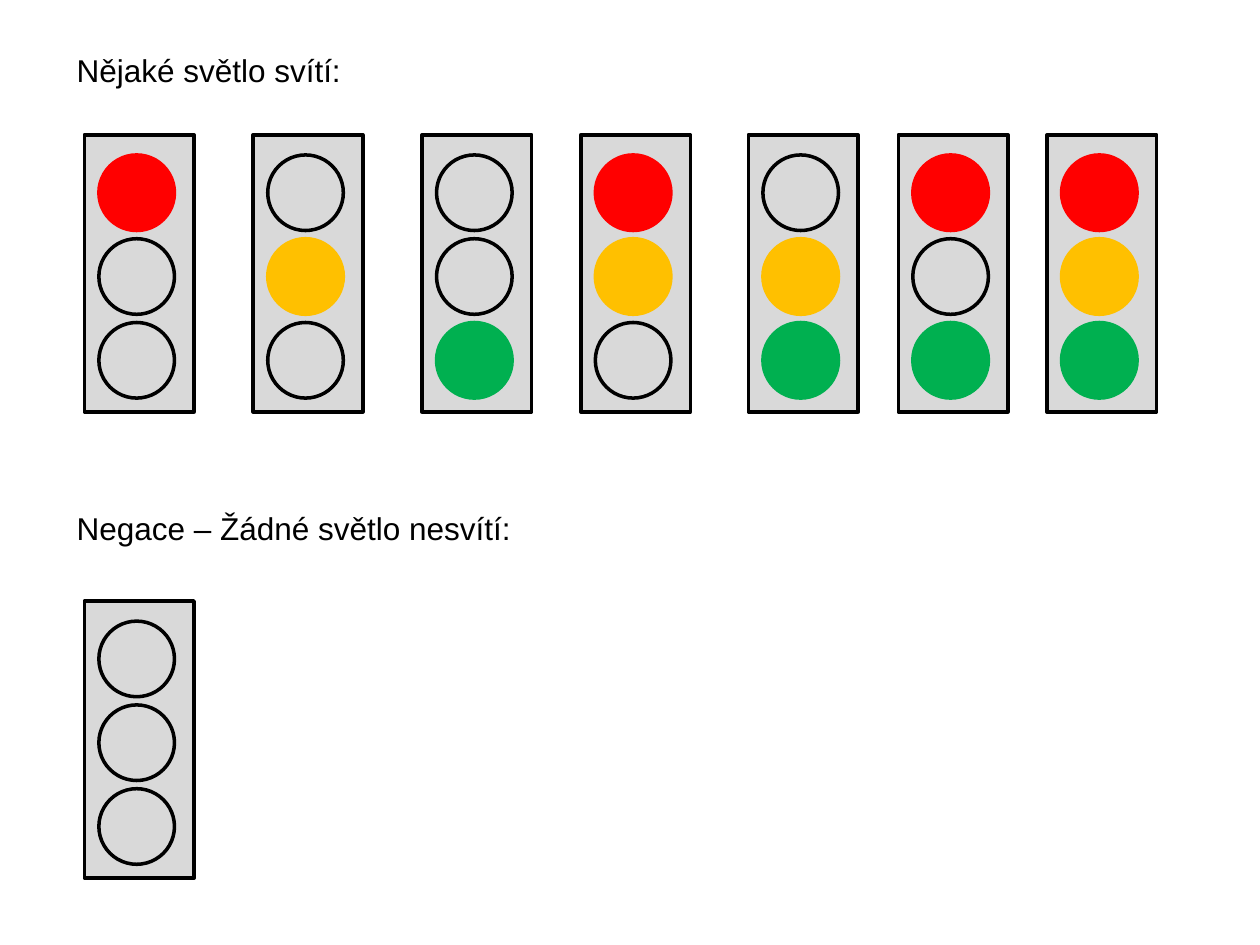
from dataclasses import dataclass
from typing import Optional

from pptx import Presentation
from pptx.dml.color import RGBColor
from pptx.enum.shapes import MSO_SHAPE
from pptx.enum.text import MSO_AUTO_SIZE
from pptx.shapes.shapetree import GroupShapes
from pptx.slide import Slide
from pptx.util import Inches, Pt

COLORS = {
    "ink": "000000",
    "housing": "D9D9D9",
    "red": "FF0000",
    "amber": "FFC000",
    "green": "00B050",
}
LAMPS = ("red", "amber", "green")

SLIDE_COLUMNS, SLIDE_ROWS = 100, 75
CELL = Inches(0.1)

HOUSING_WIDTH, HOUSING_HEIGHT = 8.7, 22
LAMP_SIZE, LAMP_PITCH = 6, 6.65
LAMP_INSET, LAMP_TOP = 1.15, 1.6
UPPER_ROW, LOWER_ROW = 10.7, 47.7
FIRST_COLUMN = 6.7


@dataclass(frozen=True)
class Heading:
    text: str
    row: float
    width: float


@dataclass(frozen=True)
class TrafficLight:
    column: float
    row: float
    lit: tuple[str, ...] = ()


HEADINGS = (
    Heading("Nějaké světlo svítí:", 3.6, 23),
    Heading("Negace – Žádné světlo nesvítí:", 39.9, 36.5),
)

TRAFFIC_LIGHTS = (
    TrafficLight(FIRST_COLUMN, UPPER_ROW, ("red",)),
    TrafficLight(20.1, UPPER_ROW, ("amber",)),
    TrafficLight(33.5, UPPER_ROW, ("green",)),
    TrafficLight(46.1, UPPER_ROW, ("red", "amber")),
    TrafficLight(59.4, UPPER_ROW, ("amber", "green")),
    TrafficLight(71.3, UPPER_ROW, ("red", "green")),
    TrafficLight(83.1, UPPER_ROW, LAMPS),
    TrafficLight(FIRST_COLUMN, LOWER_ROW),
)


def cells(count: float) -> int:
    return round(count * CELL)


def color(name: str) -> RGBColor:
    return RGBColor.from_string(COLORS[name])


def draw_outline(
    shapes: GroupShapes,
    kind: MSO_SHAPE,
    column: float,
    row: float,
    width: float,
    height: float,
    fill: Optional[str],
    line: str,
) -> None:
    shape = shapes.add_shape(kind, cells(column), cells(row), cells(width), cells(height))
    shape.shadow.inherit = False
    if fill:
        shape.fill.solid()
        shape.fill.fore_color.rgb = color(fill)
    else:
        shape.fill.background()
    shape.line.color.rgb = color(line)
    shape.line.width = Pt(2)


def draw_traffic_light(page: Slide, light: TrafficLight) -> None:
    shapes = page.shapes.add_group_shape().shapes
    draw_outline(shapes, MSO_SHAPE.RECTANGLE, light.column, light.row,
                 HOUSING_WIDTH, HOUSING_HEIGHT, "housing", "ink")
    for position, lamp in enumerate(LAMPS):
        fill = lamp if lamp in light.lit else None
        draw_outline(shapes, MSO_SHAPE.OVAL, light.column + LAMP_INSET,
                     light.row + LAMP_TOP + position * LAMP_PITCH,
                     LAMP_SIZE, LAMP_SIZE, fill, fill or "ink")


def draw_heading(page: Slide, heading: Heading) -> None:
    box = page.shapes.add_textbox(cells(5.1), cells(heading.row), cells(heading.width), cells(4))
    box.text_frame.word_wrap = False
    box.text_frame.auto_size = MSO_AUTO_SIZE.SHAPE_TO_FIT_TEXT
    para = box.text_frame.paragraphs[0]
    para.text = heading.text
    para.font.name = "Arial"
    para.font.size = Pt(18)
    para.font.color.rgb = color("ink")


def main() -> None:
    deck = Presentation()
    deck.slide_width = cells(SLIDE_COLUMNS)
    deck.slide_height = cells(SLIDE_ROWS)
    page = deck.slides.add_slide(deck.slide_layouts[6])
    for light in TRAFFIC_LIGHTS:
        draw_traffic_light(page, light)
    for heading in HEADINGS:
        draw_heading(page, heading)
    deck.save("out.pptx")


if __name__ == "__main__":
    main()
